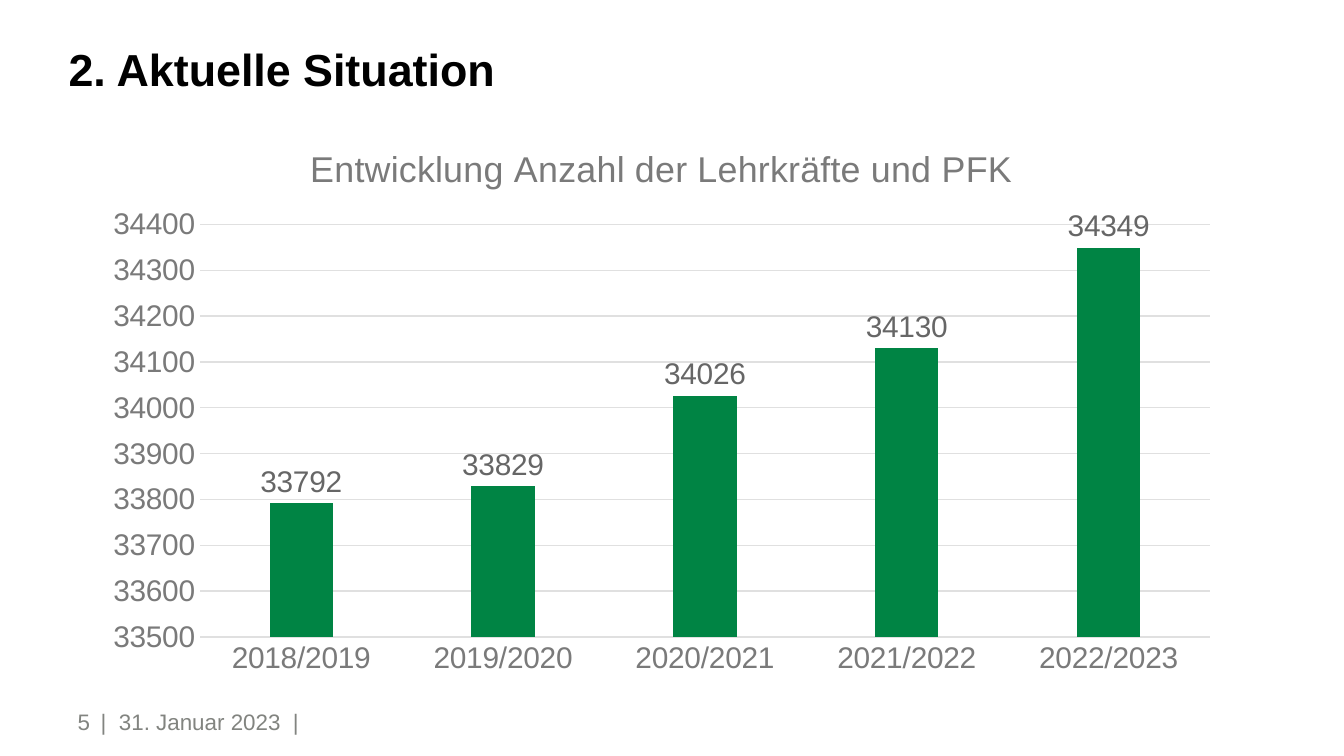
import pptx
import pptx.chart.data
import pptx.dml.color
import pptx.enum.chart
import pptx.enum.text
import pptx.oxml
import pptx.oxml.ns
import pptx.util
from pptx.util import Inches

FONT = "Arial"
COLORS = {
    "title": "000000",
    "footer": "828480",
    "axis": "7A7A7A",
    "label": "666666",
    "grid": "E0E0E0",
    "bar": "008444",
}
CHART_WIDTH, CHART_HEIGHT = 8.51, 4.19
TEACHERS = {
    "2018/2019": 33792,
    "2019/2020": 33829,
    "2020/2021": 34026,
    "2021/2022": 34130,
    "2022/2023": 34349,
}


def color(name):
    return pptx.dml.color.RGBColor.from_string(COLORS[name])


def style_font(font, size, color_name, bold=False):
    font.name = FONT
    font.size = pptx.util.Pt(size)
    font.bold = bold
    font.color.rgb = color(color_name)


def write_text(frame, text, size=12, color_name="footer", bold=False,
               align=pptx.enum.text.PP_ALIGN.LEFT,
               anchor=pptx.enum.text.MSO_ANCHOR.MIDDLE):
    frame.word_wrap = True
    frame.auto_size = pptx.enum.text.MSO_AUTO_SIZE.NONE
    frame.vertical_anchor = anchor
    frame.margin_left = frame.margin_right = 0
    frame.margin_top = frame.margin_bottom = 0
    para = frame.paragraphs[0]
    para.alignment = align
    span = para.add_run()
    span.text = text
    style_font(span.font, size, color_name, bold)


def add_title(page, text):
    box = page.shapes.title
    box.left, box.top = Inches(0.51), Inches(0.3)
    box.width, box.height = Inches(7.32), Inches(0.41)
    write_text(box.text_frame, text, size=24, color_name="title", bold=True,
               anchor=pptx.enum.text.MSO_ANCHOR.BOTTOM)


def add_footer_text(page, text, left, width, **text_format):
    box = page.shapes.add_textbox(Inches(left), Inches(5.11),
                                  Inches(width), Inches(0.52))
    write_text(box.text_frame, text, **text_format)


def place_chart_part(element, index, inner=False, **inches):
    """Give a chart part a fixed place, in inches within the chart."""
    for old in element.findall(pptx.oxml.ns.qn("c:layout")):
        element.remove(old)
    extent = {"x": CHART_WIDTH, "w": CHART_WIDTH,
              "y": CHART_HEIGHT, "h": CHART_HEIGHT}
    target = '<c:layoutTarget val="inner"/>' if inner else ""
    modes = "".join(f'<c:{key}Mode val="edge"/>' for key in "xy")
    values = "".join(f'<c:{key} val="{length / extent[key]:.4f}"/>'
                     for key, length in inches.items())
    element.insert(index, pptx.oxml.parse_xml(
        f'<c:layout {pptx.oxml.ns.nsdecls("c")}><c:manualLayout>'
        f"{target}{modes}{values}</c:manualLayout></c:layout>"))


def style_axis(axis):
    axis.major_tick_mark = pptx.enum.chart.XL_TICK_MARK.NONE
    axis.minor_tick_mark = pptx.enum.chart.XL_TICK_MARK.NONE
    style_font(axis.tick_labels.font, 16, "axis")


def style_line(line):
    line.color.rgb = color("grid")
    line.width = pptx.util.Pt(0.75)


def style_axes(chart):
    style_axis(chart.category_axis)
    style_line(chart.category_axis.format.line)
    values = chart.value_axis
    style_axis(values)
    values.format.line.fill.background()
    values.minimum_scale, values.maximum_scale = 33500, 34400
    values.major_unit = 100
    values.has_major_gridlines = True
    style_line(values.major_gridlines.format.line)


def style_columns(plot):
    plot.gap_width = 219
    plot.overlap = -27
    plot.vary_by_categories = False
    fill = plot.series[0].format.fill
    fill.solid()
    fill.fore_color.rgb = color("bar")
    labels = plot.series[0].data_labels
    labels.show_value = True
    labels.position = pptx.enum.chart.XL_LABEL_POSITION.OUTSIDE_END
    style_font(labels.font, 16, "label")


def add_column_chart(page, title, values):
    data = pptx.chart.data.CategoryChartData()
    data.categories = list(values)
    data.add_series("Series 1", list(values.values()))
    chart = page.shapes.add_chart(
        pptx.enum.chart.XL_CHART_TYPE.COLUMN_CLUSTERED,
        Inches(0.67), Inches(0.92),
        Inches(CHART_WIDTH), Inches(CHART_HEIGHT), data).chart
    style_font(chart.font, 16, "label")
    chart.has_legend = False
    chart.has_title = True
    para = chart.chart_title.text_frame.paragraphs[0]
    span = para.add_run()
    span.text = title
    style_font(span.font, 19.2, "axis")
    style_axes(chart)
    style_columns(chart.plots[0])
    root = chart.element
    place_chart_part(root.find(".//" + pptx.oxml.ns.qn("c:title")), 1,
                     x=1.59, y=0.11)
    place_chart_part(root.find(".//" + pptx.oxml.ns.qn("c:plotArea")), 0,
                     inner=True, x=0.82, y=0.75, w=7.51, h=3.07)


def main():
    deck = pptx.Presentation()
    deck.slide_width = Inches(10)
    deck.slide_height = deck.slide_width * 9 // 16
    page = deck.slides.add_slide(deck.slide_layouts.get_by_name("Title Only"))
    add_title(page, "2. Aktuelle Situation")
    add_footer_text(page, "|  31. Januar 2023  |", 0.75, 4.96)
    add_footer_text(page, "5", 0, 0.67, align=pptx.enum.text.PP_ALIGN.RIGHT)
    add_column_chart(page, "Entwicklung Anzahl der Lehrkräfte und PFK", TEACHERS)
    deck.save("out.pptx")


if __name__ == "__main__":
    main()
